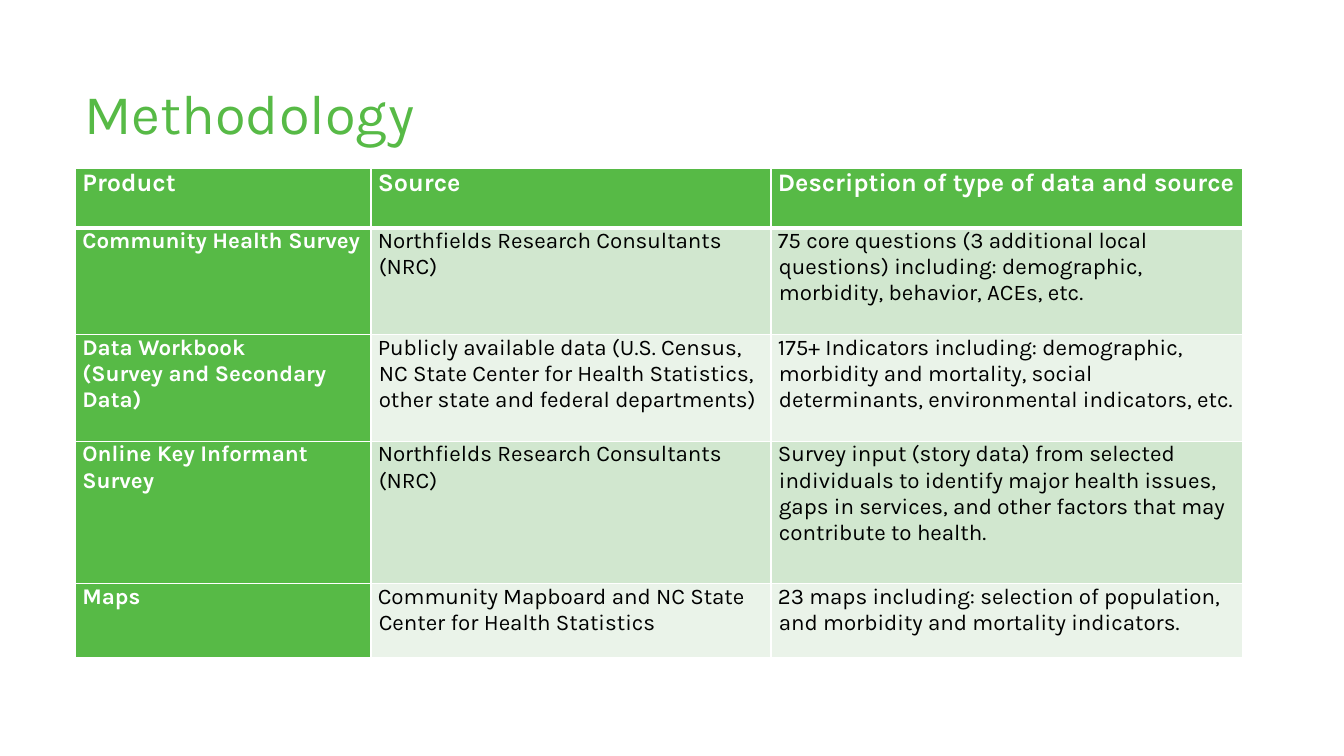
from lxml import etree
from pptx import Presentation
from pptx.dml.color import RGBColor
from pptx.enum.text import MSO_ANCHOR
from pptx.oxml.ns import qn
from pptx.util import Pt

TOP = MSO_ANCHOR.TOP
GREEN = RGBColor(0x57, 0xBA, 0x46)
MINT = RGBColor(0xD1, 0xE7, 0xCF)
PALE = RGBColor(0xEA, 0xF3, 0xE9)
WHITE = RGBColor(0xFF, 0xFF, 0xFF)
BLACK = RGBColor(0x00, 0x00, 0x00)

WIDTHS = [211, 285.8, 337]
HEIGHTS = [42.5, 76.3, 76.3, 101.5, 52.6]
ROWS = [
    ["Product", "Source", "Description of type of data and source"],
    ["Community Health Survey",
     "Northfields Research Consultants (NRC)",
     "75 core questions (3 additional local questions) including: "
     "demographic, morbidity, behavior, ACEs, etc."],
    ["Data Workbook\n(Survey and Secondary Data)",
     "Publicly available data (U.S. Census, NC State Center for Health "
     "Statistics, other state and federal departments)",
     "175+ Indicators including: demographic, morbidity and mortality, "
     "social determinants, environmental indicators, etc."],
    ["Online Key Informant Survey",
     "Northfields Research Consultants (NRC)",
     "Survey input (story data) from selected individuals to identify major "
     "health issues, gaps in services, and other factors that may "
     "contribute to health."],
    ["Maps",
     "Community Mapboard and NC State Center for Health Statistics",
     "23 maps including: selection of population, and morbidity and "
     "mortality indicators."],
]


def write(frame, text, font="Karla", size=16, color=BLACK, bold=False, hang=0):
    """Fill a text frame, one paragraph for each line of text."""
    for i, line in enumerate(text.split("\n")):
        para = frame.paragraphs[0] if i == 0 else frame.add_paragraph()
        if hang:
            props = para._p.get_or_add_pPr()
            props.set("marL", str(Pt(hang)))
            props.set("indent", str(-Pt(hang)))
        run = para.add_run()
        run.text = line
        run.font.name = font
        run.font.size = Pt(size)
        run.font.bold = bold
        run.font.color.rgb = color


def border(cell, edge, width):
    props = cell._tc.get_or_add_tcPr()
    line = etree.SubElement(props, qn("a:" + edge), w=str(Pt(width)))
    fill = etree.SubElement(line, qn("a:solidFill"))
    etree.SubElement(fill, qn("a:srgbClr"), val=str(WHITE))


class Deck:
    def __init__(self):
        self.show = Presentation()
        self.show.slide_width = Pt(960)
        self.show.slide_height = Pt(540)
        self.slide = self.show.slides.add_slide(self.show.slide_layouts[6])

    def title(self, text, left, top, width, height):
        box = self.slide.shapes.add_textbox(
            Pt(left), Pt(top), Pt(width), Pt(height))
        frame = box.text_frame
        frame.word_wrap = True
        frame.vertical_anchor = TOP
        frame.margin_top = Pt(8)
        write(frame, text, size=40, color=GREEN)

    def table(self, rows, left, top, widths, heights):
        grid = self.slide.shapes.add_table(
            len(rows), len(widths), Pt(left), Pt(top),
            Pt(sum(widths)), Pt(sum(heights))).table
        for col, width in zip(grid.columns, widths):
            col.width = Pt(width)
        for row, height in zip(grid.rows, heights):
            row.height = Pt(height)
        for r, row in enumerate(rows):
            for c, text in enumerate(row):
                self.cell(grid.cell(r, c), text, r, c)

    def cell(self, cell, text, r, c):
        head = r == 0 or c == 0
        cell.margin_left = cell.margin_right = Pt(4.9)
        cell.margin_top = cell.margin_bottom = 0
        cell.vertical_anchor = TOP
        for edge in ("lnL", "lnR", "lnT", "lnB"):
            thick = (r, edge) in ((0, "lnB"), (1, "lnT"))
            border(cell, edge, 3 if thick else 1)
        cell.fill.solid()
        cell.fill.fore_color.rgb = GREEN if head else MINT if r % 2 else PALE
        write(cell.text_frame, text, size=18 if r == 0 else 16, bold=head,
              color=WHITE if head else BLACK, hang=0.7 if c else 0)


def main():
    deck = Deck()
    deck.title("Methodology", 53.3, 48.2, 859, 103.7)
    deck.table(ROWS, 54, 120.3, WIDTHS, HEIGHTS)
    deck.show.save("out.pptx")


if __name__ == "__main__":
    main()
